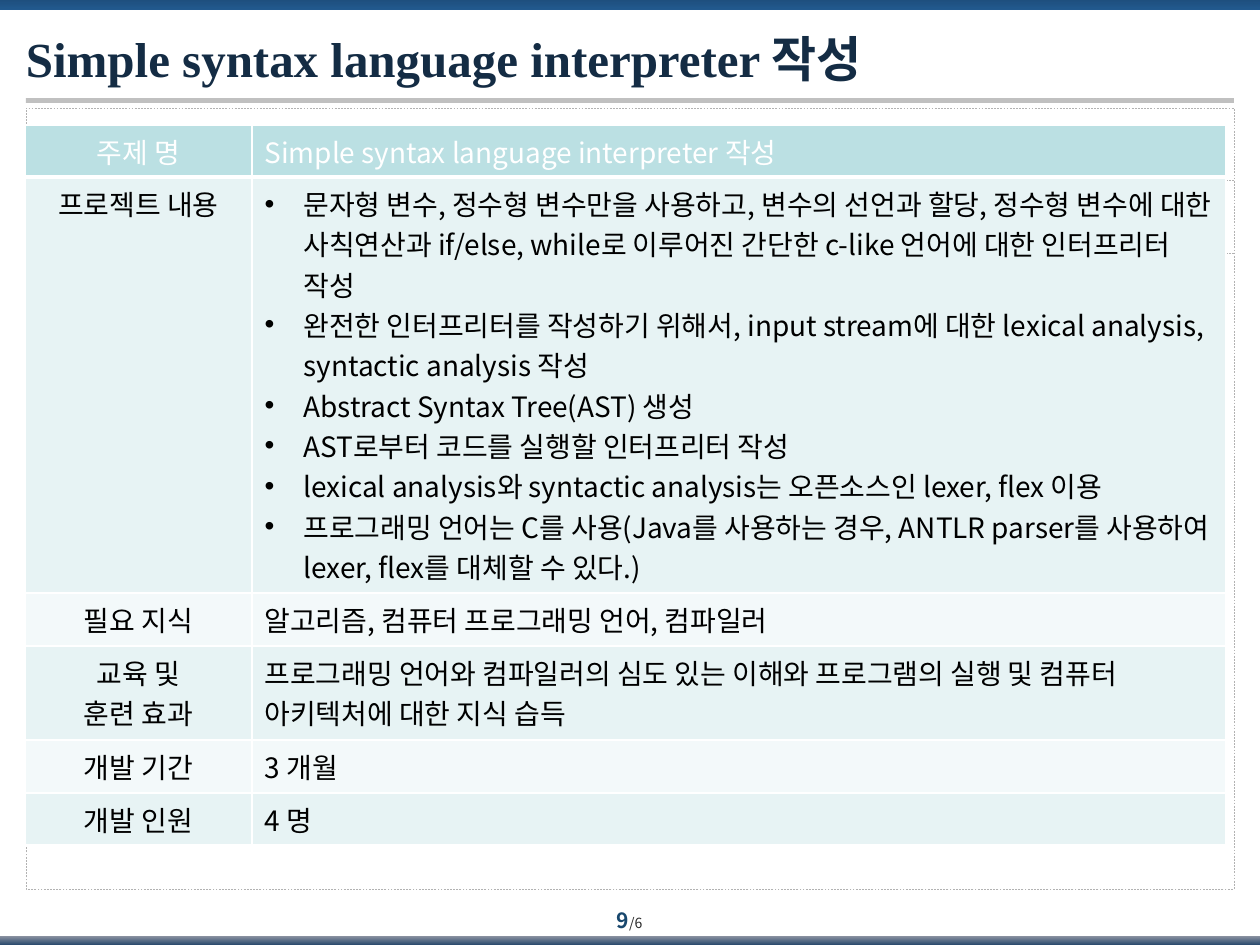
import pptx
import pptx.util
import pptx.dml.color
import pptx.enum.dml
import pptx.enum.shapes
import pptx.enum.text
import pptx.oxml.ns
import lxml.etree

SCALE = 914400 / 126
SANS = "Noto Sans CJK KR"
ALIGN = pptx.enum.text.PP_ALIGN
ANCHOR = pptx.enum.text.MSO_ANCHOR
COLORS = {
    "title": "142C44", "page": "18476D", "total": "292929",
    "rule": "C0C0C0", "frame": "B2B2B2", "white": "FFFFFF", "text": "000000",
    "head": "BBE0E3", "odd": "E7F3F4", "even": "F3F9FA",
    "top1": "1E4F7E", "top2": "22598E", "foot1": "8C93A1", "foot2": "29496D",
}
TASKS = [
    "문자형 변수, 정수형 변수만을 사용하고, 변수의 선언과 할당, 정수형 변수에 대한 사칙연산과 if/else, while로 이루어진 간단한 c-like 언어에 대한 인터프리터 작성",
    "완전한 인터프리터를 작성하기 위해서, input stream에 대한 lexical analysis, syntactic analysis 작성",
    "Abstract Syntax Tree(AST) 생성",
    "AST로부터 코드를 실행할 인터프리터 작성",
    "lexical analysis와 syntactic analysis는 오픈소스인 lexer, flex 이용",
    "프로그래밍 언어는 C를 사용(Java를 사용하는 경우, ANTLR parser를 사용하여 lexer, flex를 대체할 수 있다.)",
]
TITLE = "Simple syntax language interpreter 작성"
ROWS = [
    (52, ["주제 명"], [TITLE]),
    (416, ["프로젝트 내용"], TASKS),
    (53, ["필요 지식"], ["알고리즘, 컴퓨터 프로그래밍 언어, 컴파일러"]),
    (94, ["교육 및", "훈련 효과"],
     ["프로그래밍 언어와 컴파일러의 심도 있는 이해와 프로그램의 실행 및 컴퓨터 아키텍처에 대한 지식 습득"]),
    (53, ["개발 기간"], ["3 개월"]),
    (52, ["개발 인원"], ["4 명"]),
]


def px(n):
    return pptx.util.Emu(round(n * SCALE))


def rgb(name):
    return pptx.dml.color.RGBColor.from_string(COLORS[name])


def add(node, tag, **attrs):
    return lxml.etree.SubElement(node, pptx.oxml.ns.qn(tag), **attrs)


def write(para, text, size=16, color="text", face=SANS, bold=False,
          align=ALIGN.LEFT, space=None, bullet=False):
    para.alignment = align
    if space:
        para.line_spacing = space
    if bullet:
        props = para._p.get_or_add_pPr()
        props.set("marL", str(px(39)))
        props.set("indent", str(-px(39)))
        add(props, "a:buFont", typeface="Arial")
        add(props, "a:buChar", char="•")
    run = para.add_run()
    run.text = text
    font = run.font
    font.size = pptx.util.Pt(size)
    font.bold = bold
    font.name = face
    font.color.rgb = rgb(color)
    add(run._r.get_or_add_rPr(), "a:ea", typeface=SANS)


class Deck:
    def __init__(self):
        self.show = pptx.Presentation()
        self.show.slide_width = px(1260)
        self.show.slide_height = px(945)
        self.slide = self.show.slides.add_slide(self.show.slide_layouts[6])
        self.shapes = self.slide.shapes

    def box(self, *at):
        shape = self.shapes.add_shape(
            pptx.enum.shapes.MSO_SHAPE.RECTANGLE, *map(px, at))
        shape.shadow.inherit = False
        return shape

    def bar(self, *at, fill):
        shape = self.box(*at)
        shape.line.fill.background()
        if len(fill) == 1:
            shape.fill.solid()
            shape.fill.fore_color.rgb = rgb(fill[0])
            return
        shape.fill.gradient()
        shape.fill.gradient_angle = 270
        for stop, name in zip(shape.fill.gradient_stops, fill):
            stop.color.rgb = rgb(name)

    def dash(self, line):
        line.color.rgb = rgb("frame")
        line.width = pptx.util.Pt(0.25)
        line.dash_style = pptx.enum.dml.MSO_LINE.DASH

    def frame(self, *at):
        shape = self.box(*at)
        shape.fill.background()
        self.dash(shape.line)

    def line(self, *ends):
        link = self.shapes.add_connector(
            pptx.enum.shapes.MSO_CONNECTOR.STRAIGHT, *map(px, ends))
        self.dash(link.line)
        add(link._element.spPr, "a:effectLst")

    def text(self, *at, anchor, top=0, base=0, wrap=True):
        frame = self.shapes.add_textbox(*map(px, at)).text_frame
        frame.word_wrap = wrap
        frame.vertical_anchor = anchor
        frame.margin_left = frame.margin_right = 0
        frame.margin_top, frame.margin_bottom = px(top), px(base)
        return frame.paragraphs[0]

    def cell(self, cell, lines, fill, head, **style):
        props = cell._tc.get_or_add_tcPr()
        for side in "LRTB":
            wide = 3 if head and side == "B" else 1
            edge = add(props, "a:ln" + side, w=str(pptx.util.Pt(wide)))
            add(add(edge, "a:solidFill"), "a:srgbClr", val=COLORS["white"])
        cell.fill.solid()
        cell.fill.fore_color.rgb = rgb(fill)
        frame = cell.text_frame
        for i, line in enumerate(lines):
            para = frame.add_paragraph() if i else frame.paragraphs[0]
            write(para, line, color="white" if head else "text", **style)

    def table(self, left, top, cols, rows):
        high = sum(row[0] for row in rows)
        grid = self.shapes.add_table(
            len(rows), len(cols), *map(px, (left, top, sum(cols), high))).table
        for col, wide in zip(grid.columns, cols):
            col.width = px(wide)
        for i, (high, label, body) in enumerate(rows):
            grid.rows[i].height = px(high)
            fill = "head" if i == 0 else "odd" if i % 2 else "even"
            self.cell(grid.cell(i, 0), label, fill, i == 0, align=ALIGN.CENTER)
            self.cell(grid.cell(i, 1), body, fill, i == 0, bullet=len(body) > 1)


def main():
    deck = Deck()
    deck.bar(0, 0, 1260, 10, fill=["top1", "top2"])
    deck.bar(0, 936, 1260, 9, fill=["foot1", "foot2"])
    page = deck.text(608, 898, 43, 45, anchor=ANCHOR.MIDDLE, top=6, base=6,
                     wrap=False)
    write(page, "9", size=12, color="page", bold=True, align=ALIGN.CENTER)
    write(page, "/6", size=8, color="total", align=ALIGN.CENTER)
    deck.frame(26, 108, 1208, 781)
    for y in (180, 253):
        deck.line(26, y, 1234, y)
    deck.bar(26, 98, 1208, 5, fill=["rule"])
    title = deck.text(26, 8, 1208, 89, anchor=ANCHOR.BOTTOM, base=10)
    write(title, TITLE, size=28, color="title", face="Times New Roman",
          bold=True, space=1.25)
    deck.table(25, 125, [227, 974], ROWS)
    deck.show.save("out.pptx")


if __name__ == "__main__":
    main()
